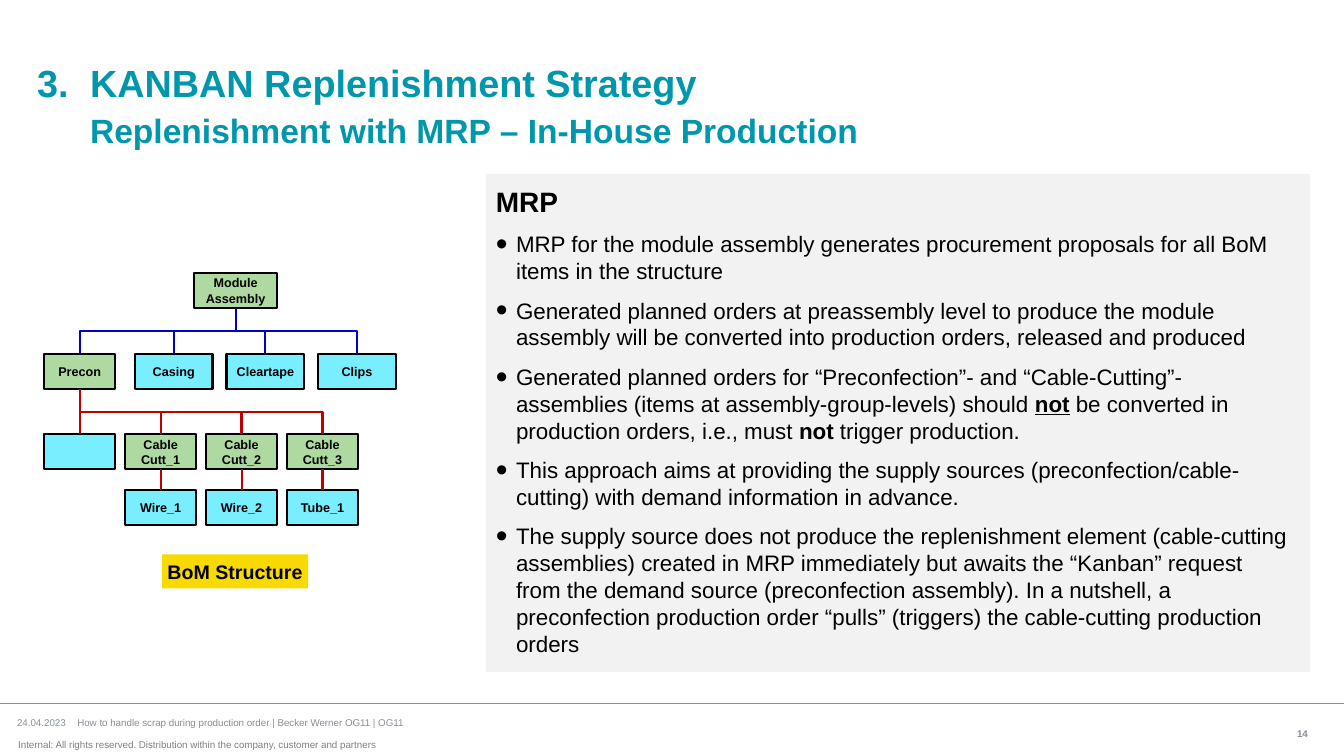
from lxml import etree
from pptx import Presentation
from pptx.dml.color import RGBColor
from pptx.enum.shapes import MSO_CONNECTOR, MSO_SHAPE
from pptx.enum.text import MSO_ANCHOR, PP_ALIGN
from pptx.oxml.ns import qn
from pptx.util import Cm, Pt

RECT = MSO_SHAPE.RECTANGLE
LINE, BENT = MSO_CONNECTOR.STRAIGHT, MSO_CONNECTOR.ELBOW
TOP, MID = MSO_ANCHOR.TOP, MSO_ANCHOR.MIDDLE
LEFT, MIDST, RIGHT = PP_ALIGN.LEFT, PP_ALIGN.CENTER, PP_ALIGN.RIGHT
WIDE, HIGH = 33.88, 19.05
DEGREE = 60000

HUES = {
    "teal": "0097AC", "ink": "000000", "gray": "888E95", "dim": "808080",
    "green": "AED9A0", "cyan": "78EEFF", "blue": "0000CC", "red": "C00000",
    "gold": "F8DA00", "pale": "F2F2F2",
}
HEAD = {"size": Pt(27), "bold": True}
SUB = {"size": Pt(24), "bold": True}
TINY = {"size": Pt(7)}
NODE = {"size": Pt(9), "bold": True}
TAG = {"size": Pt(14), "bold": True}
LEAD = {"size": Pt(20), "bold": True}
BODY = {"size": Pt(16)}
BOLD = {"size": Pt(16), "bold": True}
UNDER = {"size": Pt(16), "bold": True, "underline": True}

ITEMS = [
    [("MRP for the module assembly generates procurement proposals for all BoM "
      "items in the structure", BODY)],
    [("Generated planned orders at preassembly level to produce the module "
      "assembly will be converted into production orders, released and produced", BODY)],
    [("Generated planned orders for “Preconfection”- and “Cable-Cutting”-\v"
      "assemblies (items at assembly-group-levels) should ", BODY),
     ("not", UNDER),
     (" be converted in production orders, i.e., must ", BODY),
     ("not", BOLD),
     (" trigger production.", BODY)],
    [("This approach aims at providing the supply sources (preconfection/cable-\v"
      "cutting) with demand information in advance.", BODY)],
    [("The supply source does not produce the replenishment element (cable-cutting\v"
      "assemblies) created in MRP immediately but awaits the “Kanban” request\v"
      "from the demand source (preconfection assembly). In a nutshell, a\v"
      "preconfection production order “pulls” (triggers) the cable-cutting production\v"
      "orders", BODY)],
]


def tint(name):
    return RGBColor.from_string(HUES[name])


def apply(target, form):
    for key, value in form.items():
        setattr(target, key, value)


def write(para, runs, hue="ink", **form):
    apply(para, form)
    for text, font in runs:
        for num, part in enumerate(text.split("\v")):
            if num:
                para.add_line_break()
            run = para.add_run()
            run.text = part
            apply(run.font, {"name": "Arial", **font})
            run.font.color.rgb = tint(hue)


def hang(para, left, first):
    props = para._p.get_or_add_pPr()
    props.set("marL", str(Cm(left)))
    props.set("indent", str(Cm(first)))
    return props


def frame(shape, pad=0, anchor=TOP, wrap=True):
    text = shape.text_frame
    gap = Cm(pad)
    apply(text, {"margin_left": gap, "margin_right": gap, "margin_top": gap,
                 "margin_bottom": gap, "vertical_anchor": anchor, "word_wrap": wrap})
    return text


def label(slide, box, anchor=TOP):
    return frame(slide.shapes.add_textbox(*map(Cm, box)), 0, anchor)


def block(slide, box, fill, edge=None):
    shape = slide.shapes.add_shape(RECT, *map(Cm, box))
    shape.shadow.inherit = False
    shape.fill.solid()
    shape.fill.fore_color.rgb = tint(fill)
    if edge:
        shape.line.color.rgb = tint(edge)
        shape.line.width = Pt(1.5)
    else:
        shape.line.fill.background()
    return shape


def wire(slide, start, end, hue, width=1.5, kind=LINE):
    link = slide.shapes.add_connector(kind, *start, *end)
    link.line.color.rgb = tint(hue)
    link.line.width = Pt(width)
    etree.SubElement(link._element.spPr, qn("a:effectLst"))
    return link


def branch(slide, root, kids, hue):
    stem = root.left + root.width // 2
    base = root.top + root.height
    for kid in kids:
        end = kid.left + kid.width // 2
        drop, span = kid.top - base, abs(end - stem)
        left = (stem + end - drop) // 2
        top = (base + kid.top - span) // 2
        link = wire(slide, (left, top), (left + drop, top + span), hue, kind=BENT)
        turn = link._element.spPr.find(qn("a:xfrm"))
        if end < stem:
            turn.set("rot", str(90 * DEGREE))
        else:
            turn.set("rot", str(270 * DEGREE))
            turn.set("flipH", "1")


def title(slide, box):
    text = label(slide, box)
    first, second = text.paragraphs[0], text.add_paragraph()
    hang(first, 1.33, -1.33)
    hang(second, 1.33, 0)
    write(first, [("3.\tKANBAN Replenishment Strategy", HEAD)], "teal")
    write(second, [("Replenishment with MRP – In-House Production", SUB)], "teal",
          space_before=Pt(3.5))


def tree(slide, box):
    left, top = box

    def node(text, x, y, wide, fill):
        shape = block(slide, (left + x, top + y, wide, 0.88), fill, "ink")
        if text:
            write(frame(shape, 0.2, MID).paragraphs[0], [(text, NODE)], alignment=MIDST)
        return shape

    root = node("Module Assembly", 3.79, 0, 2.08, "green")
    precon = node("Precon", 0, 2.05, 1.8, "green")
    parts = [node(name, 2.29 + 2.31 * num, 2.05, 1.96, "cyan")
             for num, name in enumerate(["Casing", "Cleartape", "Clips"])]
    cuts = [node(name, 2.04 * num, 4.06, 1.8, "green" if name else "cyan")
            for num, name in enumerate(["", "Cable Cutt_1", "Cable Cutt_2", "Cable Cutt_3"])]
    leaves = [node(name, 2.04 * num, 5.46, 1.8, "cyan")
              for num, name in enumerate(["Wire_1", "Wire_2", "Tube_1"], 1)]
    branch(slide, root, [precon, *parts], "blue")
    branch(slide, precon, cuts, "red")
    for cut, leaf in zip(cuts[1:], leaves):
        link = wire(slide, (cut.left, cut.top), (leaf.left, leaf.top), "red")
        link.begin_connect(cut, 2)
        link.end_connect(leaf, 0)
    tag = block(slide, (left + 2.98, top + 7.09, 3.68, 0.86), "gold")
    write(frame(tag, 0.13, TOP, False).paragraphs[0], [("BoM Structure", TAG)], alignment=LEFT)


def panel(slide, box):
    text = frame(block(slide, box, "pale"), 0.25)
    form = {"alignment": LEFT, "space_after": Pt(9)}
    write(text.paragraphs[0], [("MRP", LEAD)], **form)
    for runs in ITEMS:
        para = text.add_paragraph()
        props = hang(para, 0.51, -0.51)
        etree.SubElement(props, qn("a:buSzPct")).set("val", "150000")
        etree.SubElement(props, qn("a:buFont")).set("typeface", "Arial")
        etree.SubElement(props, qn("a:buChar")).set("char", "•")
        write(para, runs, **form)


def footer(slide, box):
    left, top, wide, high = box
    wire(slide, (Cm(left), Cm(top)), (Cm(left + wide), Cm(top)), "gray", 1)
    date = label(slide, (left + 0.43, top + 0.33, 19.08, 0.3), MID).paragraphs[0]
    hang(date, 1.52, -1.52)
    write(date, [("24.04.2023\tHow to handle scrap during production order"
                  " | Becker Werner OG11 | OG11", TINY)], "gray")
    note = label(slide, (left + 0.46, top + high - 0.56, 9.96, 0.56), MID).paragraphs[0]
    write(note, [("Internal: All rights reserved. Distribution within the company,"
                  " customer and partners", TINY)], "dim")
    page = label(slide, (left + wide - 2.64, top + 0.61, 1.73, 0.3), MID).paragraphs[0]
    write(page, [("14", {**TINY, "bold": True})], "gray", alignment=RIGHT)


def main():
    deck = Presentation()
    deck.slide_width, deck.slide_height = Cm(WIDE), Cm(HIGH)
    slide = deck.slides.add_slide(deck.slide_layouts[6])
    title(slide, (0.94, 1.5, 26.92, 2.39))
    tree(slide, (1.11, 6.88))
    panel(slide, (12.25, 4.39, 20.78, 12.55))
    footer(slide, (0, 17.73, WIDE, HIGH - 17.73))
    deck.save("out.pptx")


if __name__ == "__main__":
    main()
